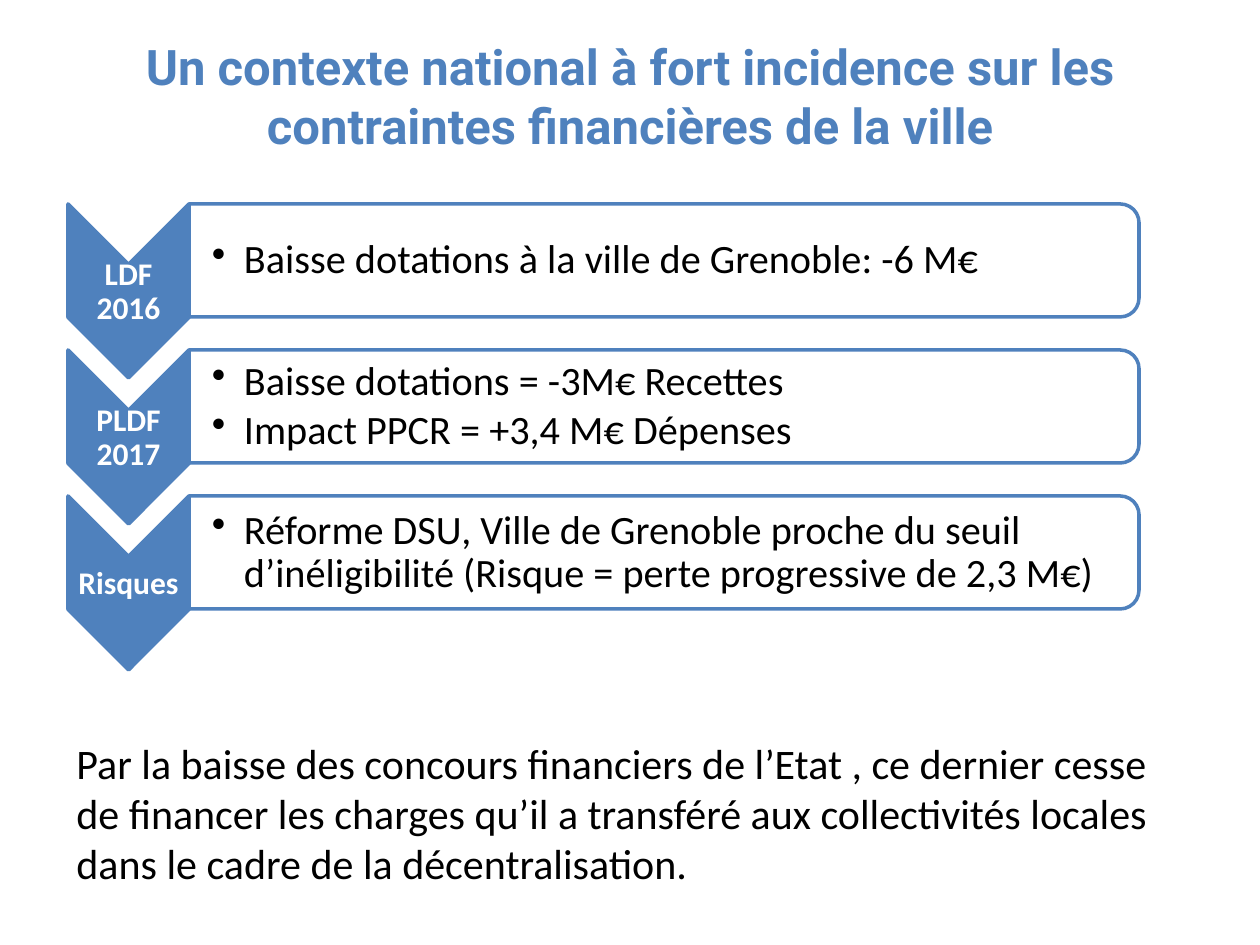
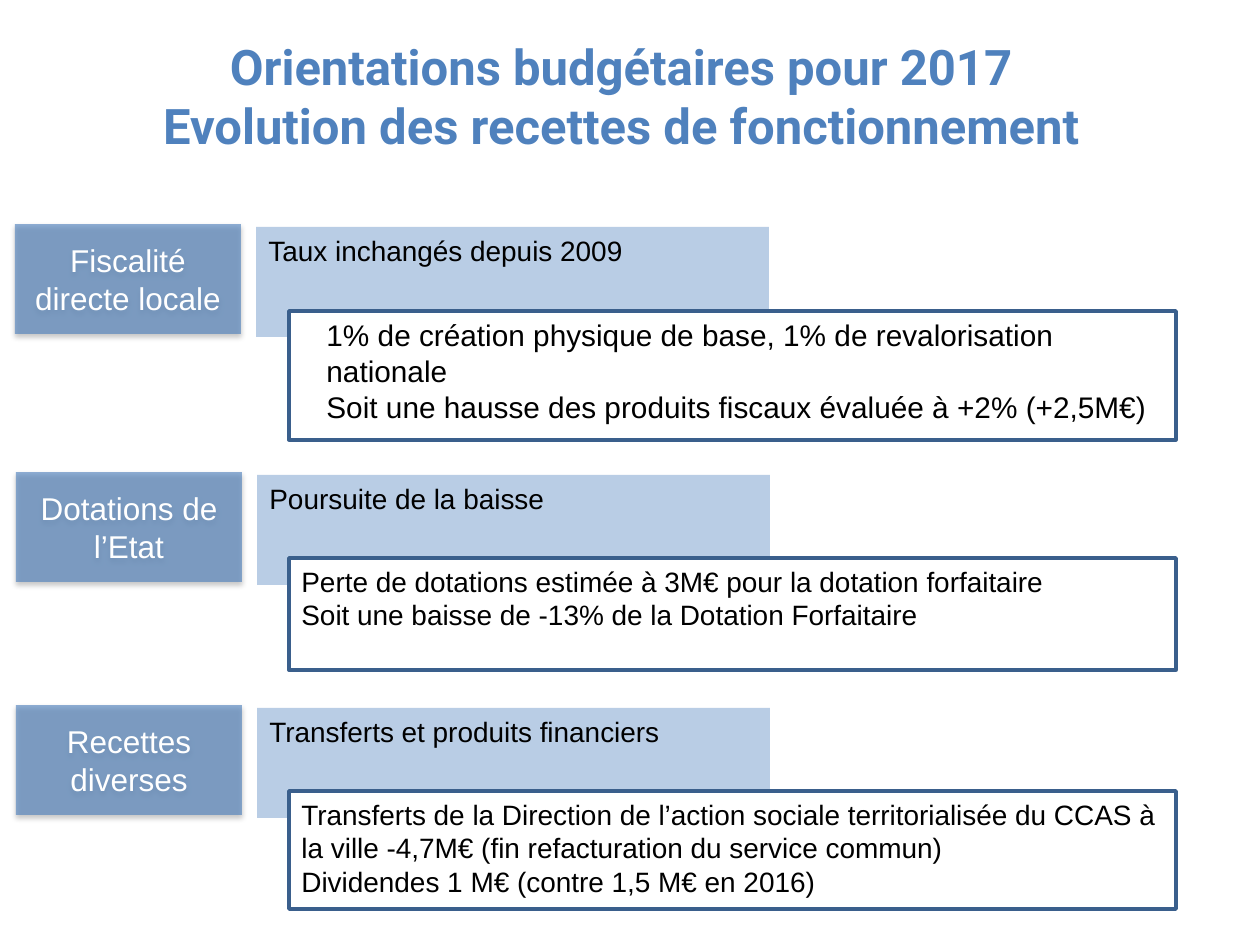
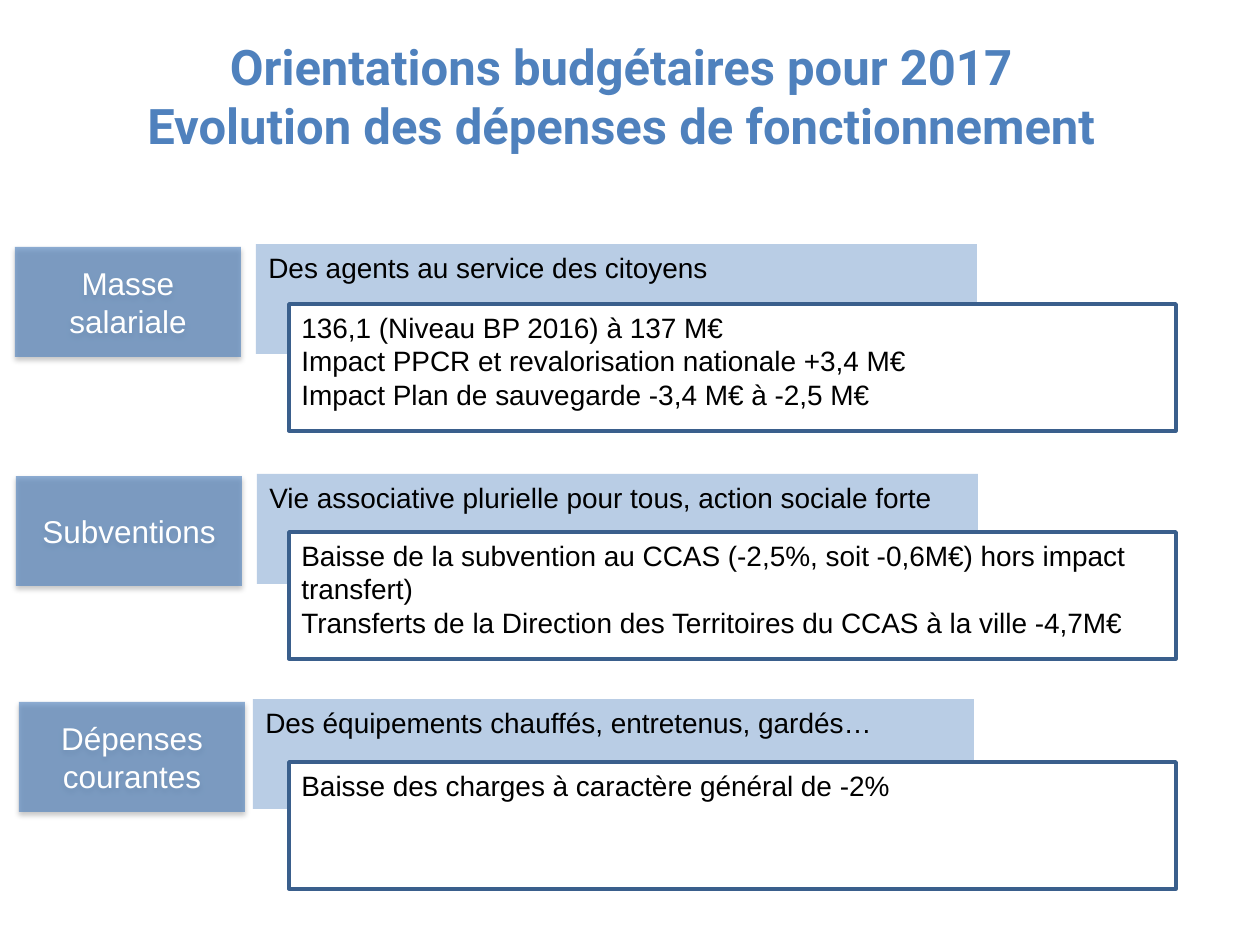
from dataclasses import dataclass

from lxml import etree
from pptx import Presentation
from pptx.dml.color import RGBColor
from pptx.enum.shapes import MSO_SHAPE
from pptx.enum.text import MSO_ANCHOR, MSO_AUTO_SIZE, PP_ALIGN
from pptx.oxml.ns import qn
from pptx.util import Inches, Pt

RECTANGLE = MSO_SHAPE.RECTANGLE
CHEVRON = MSO_SHAPE.CHEVRON
ROUND_BAR = MSO_SHAPE.ROUND_2_SAME_RECTANGLE
TOP, MIDDLE = MSO_ANCHOR.TOP, MSO_ANCHOR.MIDDLE
LEFT, CENTER = PP_ALIGN.LEFT, PP_ALIGN.CENTER
GROW = MSO_AUTO_SIZE.SHAPE_TO_FIT_TEXT

BLUE = RGBColor(0x4F, 0x81, 0xBD)
PALE_BLUE = RGBColor(0xB9, 0xCD, 0xE5)
DARK_BLUE = RGBColor(0x3A, 0x5F, 0x8C)
WHITE = RGBColor(0xFF, 0xFF, 0xFF)
BLACK = RGBColor(0, 0, 0)

TITLE_FONT, STEP_FONT, SECTION_FONT = "Roboto", "Calibri", "Arial"
PX_PER_INCH = 126
TITLE_ONLY = 5


@dataclass
class Section:
    label: str
    heading: str
    details: list
    label_at: tuple
    heading_at: tuple
    detail_top: int
    detail_height: int
    size: int = 16
    indent: int = 0


def px(length):
    return round(length * Inches(1) / PX_PER_INCH)


# Shared helpers

def write(frame, lines, font, size, color, bold=False, align=LEFT, anchor=TOP):
    frame.word_wrap = True
    frame.vertical_anchor = anchor
    frame.text = "\n".join(lines)
    for paragraph in frame.paragraphs:
        paragraph.alignment = align
        paragraph.font.name = font
        paragraph.font.size = Pt(size)
        paragraph.font.bold = bold
        paragraph.font.color.rgb = color


def set_insets(frame, left, others):
    frame.margin_left = px(left)
    frame.margin_top = frame.margin_right = frame.margin_bottom = px(others)


def add_block(slide, kind, box, fill, line=None, opacity=100):
    block = slide.shapes.add_shape(kind, *map(px, box))
    block.shadow.inherit = False
    block.fill.solid()
    block.fill.fore_color.rgb = fill
    if opacity < 100:
        color = block.fill._xPr.find(".//" + qn("a:srgbClr"))
        etree.SubElement(color, qn("a:alpha"), val=str(opacity * 1000))
    if line is None:
        block.line.fill.background()
    else:
        block.line.color.rgb = line
        block.line.width = Pt(2)
    return block


def add_turned(slide, kind, box, fill, opacity=100):
    """Place a shape so that it fills the box after a quarter turn."""
    left, top, width, height = box
    shift = (width - height) / 2
    turned = (left + shift, top - shift, height, width)
    block = add_block(slide, kind, turned, fill, BLUE, opacity)
    block.rotation = 90


def add_textbox(slide, box):
    return slide.shapes.add_textbox(*map(px, box)).text_frame


def drop_shadow(block):
    effects = block._element.spPr.find(qn("a:effectLst"))
    shadow = etree.SubElement(
        effects, qn("a:outerShdw"), blurRad=str(Pt(3.1)), dist=str(Pt(1.8)),
        dir="5400000", rotWithShape="0")
    color = etree.SubElement(shadow, qn("a:srgbClr"), val=str(BLACK))
    etree.SubElement(color, qn("a:alpha"), val="35000")


def set_bullet(paragraph, indent):
    properties = paragraph._p.get_or_add_pPr()
    properties.set("marL", str(indent))
    properties.set("indent", str(-indent))
    # The bullet belongs before the default run properties
    bullet = etree.Element(qn("a:buChar"), char="•")
    properties.find(qn("a:defRPr")).addprevious(bullet)


def add_titled_slide(deck, title, left):
    slide = deck.slides.add_slide(deck.slide_layouts[TITLE_ONLY])
    holder = slide.shapes.title
    holder.left, holder.top = px(left), px(16)
    holder.width, holder.height = px(1134), px(158)
    write(holder.text_frame, [title], TITLE_FONT, 28, BLUE, True, CENTER, MIDDLE)
    return slide


# National context: chevrons with bulleted bars

def add_step(slide, left, top, name, points):
    add_turned(slide, CHEVRON, (left, top, 121, 174), BLUE)
    caption = add_textbox(slide, (left, top + 62, 121, 52))
    write(caption, [name], STEP_FONT, 18, WHITE, True, CENTER, MIDDLE)
    set_insets(caption, 6, 6)
    caption.paragraphs[0].line_spacing = 0.9

    add_turned(slide, ROUND_BAR, (left + 121, top, 950, 113), WHITE, 90)
    body = add_textbox(slide, (left + 121, top + 6, 945, 102))
    write(body, points, STEP_FONT, 23, BLACK, anchor=MIDDLE)
    set_insets(body, 23, 2)
    for paragraph in body.paragraphs:
        paragraph.line_spacing = 0.9
        paragraph.space_after = Pt(3.5)
        set_bullet(paragraph, px(32))


def build_context(deck, title, steps, conclusion):
    slide = add_titled_slide(deck, title, 63)
    for row, (name, points) in enumerate(steps):
        add_step(slide, 68, 204 + row * 146, name, points)
    note = add_textbox(slide, (64, 731, 1142, 165))
    write(note, [conclusion], STEP_FONT, 24, BLACK)
    note.auto_size = GROW


# Budget guidelines: label, heading and detail box for each section

def add_section(slide, section, heading_width):
    heading = add_block(slide, RECTANGLE,
                        (*section.heading_at, heading_width, 110), PALE_BLUE)
    write(heading.text_frame, [section.heading], SECTION_FONT, 16, BLACK)

    detail = add_block(
        slide, RECTANGLE,
        (289, section.detail_top, 887, section.detail_height), WHITE, DARK_BLUE)
    write(detail.text_frame, section.details, SECTION_FONT, section.size, BLACK)
    for paragraph in detail.text_frame.paragraphs:
        paragraph._p.get_or_add_pPr().set("marL", str(px(section.indent)))

    label = add_block(slide, RECTANGLE, (*section.label_at, 226, 110), BLUE,
                      opacity=63)
    drop_shadow(label)
    write(label.text_frame, [section.label], SECTION_FONT, 18, WHITE,
          align=CENTER, anchor=MIDDLE)


def build_guidelines(deck, subject, sections, heading_width):
    title = f"Orientations budgétaires pour 2017\v{subject}"
    slide = add_titled_slide(deck, title, 54)
    for section in sections:
        add_section(slide, section, heading_width)


STEPS = [
    ("LDF 2016", ["Baisse dotations à la ville de Grenoble: -6 M€"]),
    ("PLDF 2017", ["Baisse dotations = -3M€ Recettes",
                   "Impact PPCR = +3,4 M€ Dépenses"]),
    ("Risques", ["Réforme DSU, Ville de Grenoble proche du seuil d’inéligibilité "
                 "(Risque = perte progressive de 2,3 M€)"]),
]

REVENUE = [
    Section("Fiscalité directe locale", "Taux inchangés depuis 2009",
            ["1% de création physique de base, 1% de revalorisation nationale",
             "Soit une hausse des produits fiscaux évaluée à +2% (+2,5M€)"],
            (15, 224), (256, 227), 311, 129, size=17, indent=25),
    Section("Dotations de l’Etat", "Poursuite de la baisse",
            ["Perte de dotations estimée à 3M€ pour la dotation forfaitaire",
             "Soit une baisse de -13% de la Dotation Forfaitaire"],
            (16, 472), (257, 475), 558, 112),
    Section("Recettes diverses", "Transferts et produits financiers",
            ["Transferts de la Direction de l’action sociale territorialisée du "
             "CCAS à la ville -4,7M€ (fin refacturation du service commun)",
             "Dividendes 1 M€ (contre 1,5 M€ en 2016)"],
            (16, 705), (257, 708), 791, 118),
]

SPENDING = [
    Section("Masse salariale", "Des agents au service des citoyens",
            ["136,1 (Niveau BP 2016) à 137 M€",
             "Impact PPCR et revalorisation nationale +3,4 M€",
             "Impact Plan de sauvegarde -3,4 M€ à -2,5 M€"],
            (15, 247), (256, 244), 304, 127),
    Section("Subventions",
            "Vie associative plurielle pour tous, action sociale forte",
            ["Baisse de la subvention au CCAS (-2,5%, soit -0,6M€) hors impact "
             "transfert)",
             "Transferts de la Direction des Territoires du CCAS à la ville -4,7M€"],
            (16, 476), (257, 474), 532, 127),
    Section("Dépenses courantes", "Des équipements chauffés, entretenus, gardés…",
            ["Baisse des charges à caractère général de -2%"],
            (19, 702), (253, 699), 762, 127),
]


def main():
    deck = Presentation()
    deck.slide_width, deck.slide_height = px(1260), px(945)
    build_context(
        deck,
        "Un contexte national à fort incidence sur les contraintes financières "
        "de la ville",
        STEPS,
        "Par la baisse des concours financiers de l’Etat , ce dernier cesse de "
        "financer les charges qu’il a transféré aux collectivités locales dans "
        "le cadre de la décentralisation.")
    build_guidelines(deck, "Evolution des recettes de fonctionnement", REVENUE, 513)
    build_guidelines(deck, "Evolution des dépenses de fonctionnement", SPENDING, 721)
    deck.save("out.pptx")


if __name__ == "__main__":
    main()
